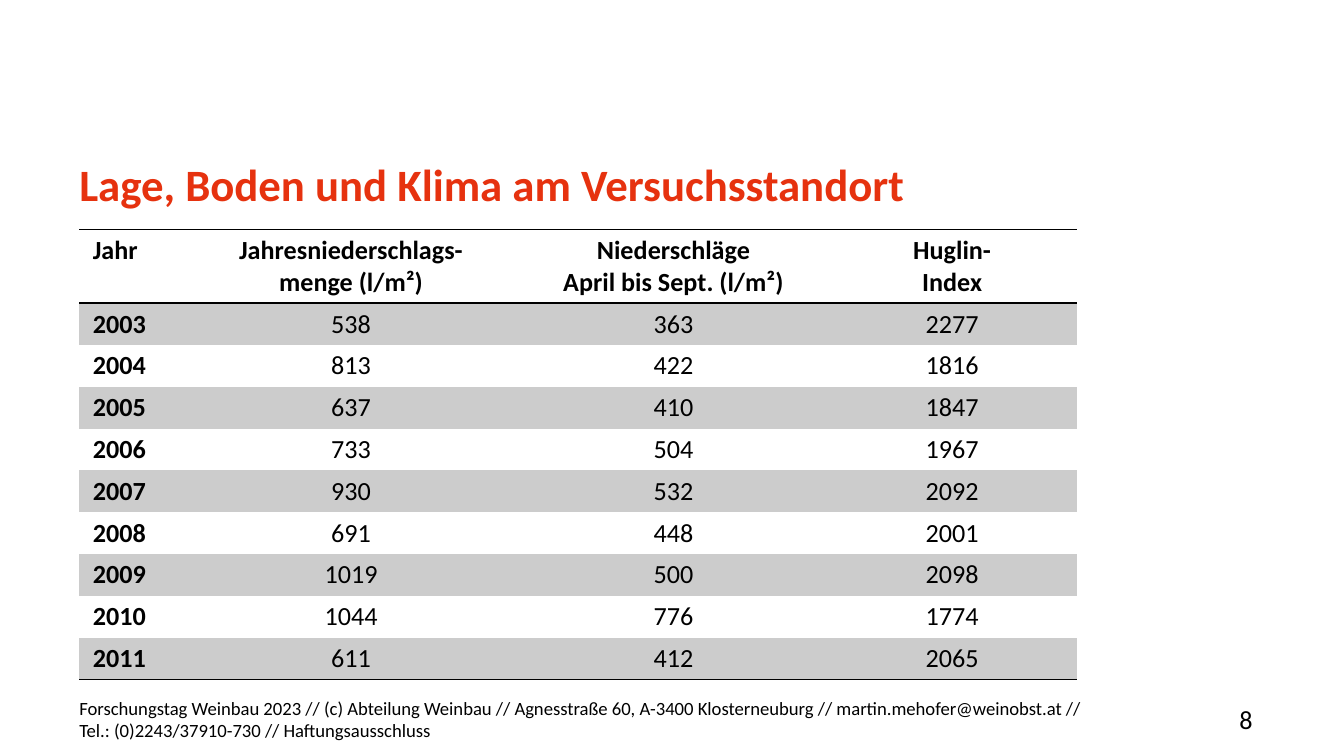
from lxml import etree
from pptx import Presentation
from pptx.dml.color import RGBColor
from pptx.enum.text import MSO_ANCHOR, PP_ALIGN
from pptx.oxml.ns import qn
from pptx.util import Pt

RED = RGBColor(0xE6, 0x32, 0x0F)
BLACK = RGBColor(0, 0, 0)
GREY = RGBColor(0xCC, 0xCC, 0xCC)
NO_STYLE_NO_GRID = "{2D5ABB26-0587-4C30-8999-92F81FD0307C}"
LEFT = 42.5

deck = Presentation()
deck.slide_width, deck.slide_height = Pt(720), Pt(405)
page = deck.slides.add_slide(deck.slide_layouts[6])


def style(paragraph, size, color=BLACK, bold=False, align=PP_ALIGN.LEFT):
    paragraph.alignment = align
    font = paragraph.font
    font.name, font.size, font.bold = "Calibri", Pt(size), bold
    font.color.rgb = color


def add_border(cell, side):
    """Draw a black line on one side of a cell: lnT for top, lnB for bottom."""
    line = etree.SubElement(cell._tc.get_or_add_tcPr(), qn(f"a:{side}"), w=str(Pt(1)))
    fill = etree.SubElement(line, qn("a:solidFill"))
    etree.SubElement(fill, qn("a:srgbClr"), val=str(BLACK))


FOOTER = ("Forschungstag Weinbau 2023 // (c) Abteilung Weinbau // Agnesstraße 60, "
          "A-3400 Klosterneuburg // martin.mehofer@weinobst.at // "
          "Tel.: (0)2243/37910-730 // Haftungsausschluss")
texts = [
    ("Lage, Boden und Klima am Versuchsstandort", LEFT, 82.8, 628.5, 49,
     MSO_ANCHOR.TOP, 24, RED, True, PP_ALIGN.LEFT),
    (FOOTER, LEFT, 377.3, 541.5, 15.8, MSO_ANCHOR.MIDDLE, 10, BLACK, False, PP_ALIGN.LEFT),
    ("8", 595.5, 377.3, 75.5, 15.8, MSO_ANCHOR.MIDDLE, 14, BLACK, False, PP_ALIGN.RIGHT),
]
for text, left, top, width, height, anchor, size, color, bold, align in texts:
    box = page.shapes.add_textbox(Pt(left), Pt(top), Pt(width), Pt(height))
    frame = box.text_frame
    frame.word_wrap = True
    frame.vertical_anchor = anchor
    frame.margin_left = frame.margin_right = frame.margin_top = frame.margin_bottom = 0
    frame.text = text
    style(frame.paragraphs[0], size, color, bold, align)
    if color == RED:
        frame.paragraphs[0].line_spacing = Pt(30)

rows = [
    ("Jahr", "Jahresniederschlags-\nmenge (l/m²)",
     "Niederschläge\nApril bis Sept. (l/m²)", "Huglin-\nIndex"),
    (2003, 538, 363, 2277),
    (2004, 813, 422, 1816),
    (2005, 637, 410, 1847),
    (2006, 733, 504, 1967),
    (2007, 930, 532, 2092),
    (2008, 691, 448, 2001),
    (2009, 1019, 500, 2098),
    (2010, 1044, 776, 1774),
    (2011, 611, 412, 2065),
]
column_widths = [55.2, 180.8, 164.7, 133.8]
HEADER_HEIGHT, ROW_HEIGHT = 39.5, 22.4
table_height = HEADER_HEIGHT + ROW_HEIGHT * (len(rows) - 1)

table = page.shapes.add_table(len(rows), len(column_widths), Pt(LEFT), Pt(123),
                              Pt(sum(column_widths)), Pt(table_height)).table
table._tbl.tblPr.find(qn("a:tableStyleId")).text = NO_STYLE_NO_GRID
for column, width in zip(table.columns, column_widths):
    column.width = Pt(width)

for row_index, values in enumerate(rows):
    is_header = row_index == 0
    table.rows[row_index].height = Pt(HEADER_HEIGHT if is_header else ROW_HEIGHT)
    for column_index, value in enumerate(values):
        cell = table.cell(row_index, column_index)
        cell.margin_left = cell.margin_right = Pt(7.2)
        cell.margin_top = cell.margin_bottom = Pt(2.7)
        cell.text = str(value)
        is_year = column_index == 0
        for paragraph in cell.text_frame.paragraphs:
            style(paragraph, 14, bold=is_header or is_year,
                  align=PP_ALIGN.LEFT if is_year else PP_ALIGN.CENTER)
        if is_header:
            add_border(cell, "lnT")
        if row_index in (0, len(rows) - 1):
            add_border(cell, "lnB")
        if row_index % 2:
            cell.fill.solid()
            cell.fill.fore_color.rgb = GREY
        else:
            cell.fill.background()

deck.save("out.pptx")
